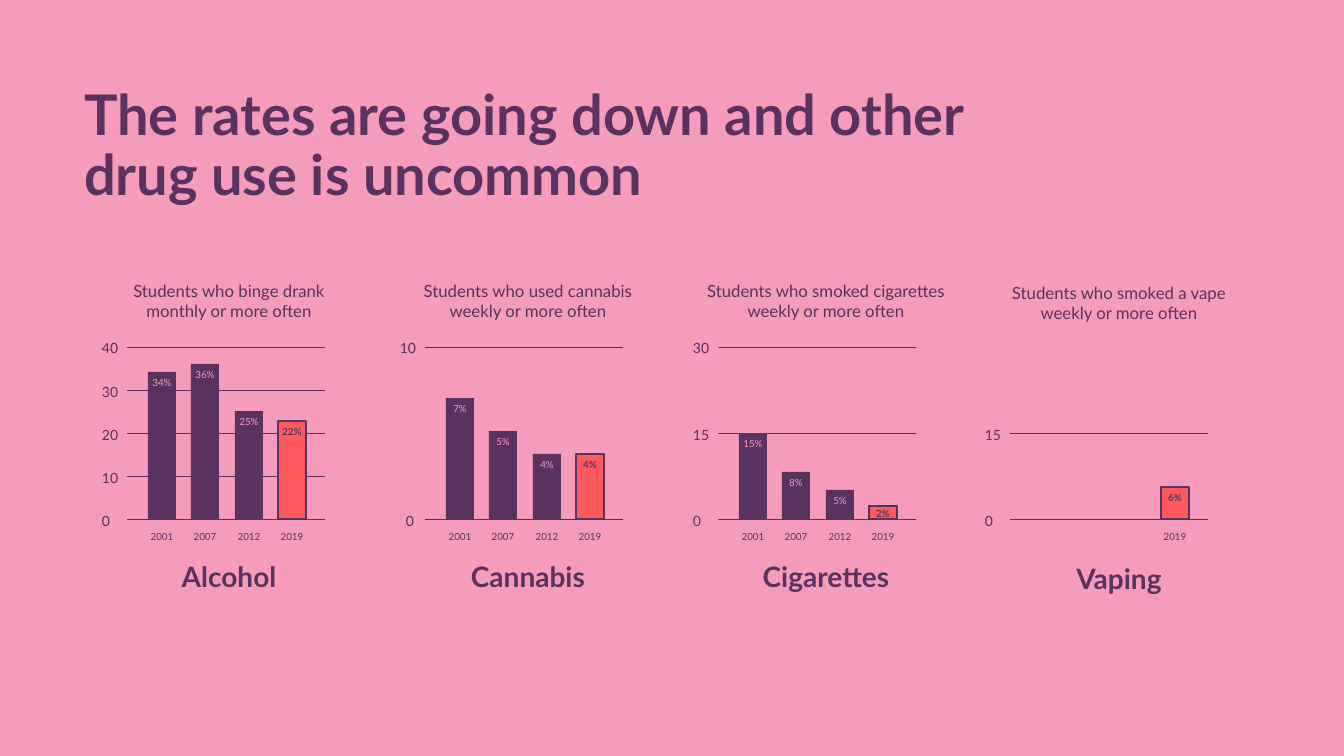
"""Build a slide of four column charts on falling student drug use."""
from lxml import etree
from pptx import Presentation, util as u
from pptx.dml import color
from pptx.enum import shapes, text
from pptx.oxml import ns

TITLE = "The rates are going down and other drug use is uncommon"
LATEST = "2019"
PANELS = [
    {"name": "Alcohol", "caption": "Students who binge drank monthly or more often",
     "bars": [("2001", "34%", 147), ("2007", "36%", 155), ("2012", "25%", 108), ("2019", "22%", 98)],
     "ticks": [(0, 0), (10, 43), (20, 86), (30, 129), (40, 172)],
     "left": 127, "center": 229, "widths": (238, 129), "drop": 0, "zero_shift": 0},
    {"name": "Cannabis", "caption": "Students who used cannabis weekly or more often",
     "bars": [("2001", "7%", 121), ("2007", "5%", 88), ("2012", "4%", 65), ("2019", "4%", 65)],
     "ticks": [(0, 0), (10, 172)],
     "left": 425, "center": 528, "widths": (253, 181), "drop": 0, "zero_shift": 6},
    {"name": "Cigarettes", "caption": "Students who smoked cigarettes weekly or more often",
     "bars": [("2001", "15%", 86), ("2007", "8%", 47), ("2012", "5%", 29), ("2019", "2%", 13)],
     "ticks": [(0, 0), (15, 86), (30, 172)],
     "left": 718, "center": 826, "widths": (279, 197), "drop": 0, "zero_shift": 0},
    {"name": "Vaping", "caption": "Students who smoked a vape weekly or more often",
     "bars": [("2019", "6%", 32)],
     "ticks": [(0, 0), (15, 86)],
     "left": 1010, "center": 1119, "widths": (279, 129), "drop": 2, "zero_shift": 0},
]
BAR_OFFSETS = {"2001": 21, "2007": 64, "2012": 108, "2019": 151}
FONT, PINK, PLUM, RED = "Lato", "F59BBB", "59325F", "FF585D"
BASELINE, PLOT_WIDTH, BAR_WIDTH = 519, 198, 28
LABEL_WIDTH, LABEL_HEIGHT, LABEL_MIN = 43, 20, 16
YEAR_TOP, CAPTION_TOP, NAME_TOP = 526, 276, 554
CENTER, LEFT = text.PP_ALIGN.CENTER, text.PP_ALIGN.LEFT


def px(length):
    return u.Emu(round(length * 914400 / 100.8))


def rgb(value):
    return color.RGBColor.from_string(value)


def style(para, align, size, hue=PLUM, bold=False):
    para.alignment = align
    para.font.name, para.font.size, para.font.bold = FONT, u.Pt(size), bold
    para.font.color.rgb = rgb(hue)


def add_label(page, words, place, size, align=CENTER, hue=PLUM, bold=False, side=10):
    box = page.shapes.add_textbox(*map(px, place))
    frame = box.text_frame
    frame.word_wrap = True
    frame.margin_left = frame.margin_right = px(side)
    frame.margin_top = frame.margin_bottom = px(5)
    para = frame.paragraphs[0]
    para.text = words
    style(para, align, size, hue, bold)


def add_gridline(page, left, level):
    line = page.shapes.add_connector(
        shapes.MSO_CONNECTOR.STRAIGHT, px(left + PLOT_WIDTH), px(level), px(left), px(level))
    line.line.color.rgb, line.line.width = rgb(PLUM), u.Pt(0.5)
    etree.SubElement(line.element.spPr, ns.qn("a:effectLst"))


def add_bar(page, left, height, newest):
    bar = page.shapes.add_shape(
        shapes.MSO_SHAPE.RECTANGLE, px(left), px(BASELINE - height), px(BAR_WIDTH), px(height))
    bar.shadow.inherit = False
    bar.fill.solid()
    bar.fill.fore_color.rgb = rgb(RED if newest else PLUM)
    if newest:
        bar.line.color.rgb, bar.line.width = rgb(PLUM), u.Pt(1)
    else:
        bar.line.fill.background()


def add_rates(page, panel):
    left = panel["left"]
    for value, rise in panel["ticks"]:
        level = BASELINE - rise
        shift = 0 if value else panel["zero_shift"]
        add_gridline(page, left, level)
        add_label(page, str(value), (left - 35 + shift, level - 12, 47, 19), 10, LEFT)
    for year, rate, height in panel["bars"]:
        newest = year == LATEST
        bar_left = left + BAR_OFFSETS[year]
        label_left = bar_left + (BAR_WIDTH - LABEL_WIDTH) / 2
        rate_top = BASELINE - max(height, LABEL_MIN)
        add_bar(page, bar_left, height, newest)
        add_label(page, year, (label_left, YEAR_TOP, LABEL_WIDTH, LABEL_HEIGHT), 7, side=0)
        add_label(page, rate, (label_left, rate_top, LABEL_WIDTH, LABEL_HEIGHT), 7,
                  hue=PLUM if newest else PINK, bold=newest, side=0)


def add_title(page):
    title = page.shapes.title
    title.left, title.top, title.width, title.height = px(74), px(82), px(999), px(87)
    frame = title.text_frame
    frame.word_wrap, frame.auto_size = True, text.MSO_AUTO_SIZE.NONE
    frame.vertical_anchor = text.MSO_ANCHOR.TOP
    para = frame.paragraphs[0]
    para.text, para.line_spacing = TITLE, 0.9
    style(para, LEFT, 40, bold=True)


def main():
    deck = Presentation()
    deck.slide_width, deck.slide_height = px(1344), px(756)
    page = deck.slides.add_slide(deck.slide_layouts[5])
    page.background.fill.solid()
    page.background.fill.fore_color.rgb = rgb(PINK)
    add_title(page)
    for panel in PANELS:
        center, drop = panel["center"], panel["drop"]
        caption_width, name_width = panel["widths"]
        add_label(page, panel["caption"],
                  (center - caption_width / 2, CAPTION_TOP + drop, caption_width, 57), 12)
        add_rates(page, panel)
        add_label(page, panel["name"],
                  (center - name_width / 2, NAME_TOP + drop, name_width, 44), 20, bold=True)
    deck.save("out.pptx")


if __name__ == "__main__":
    main()
